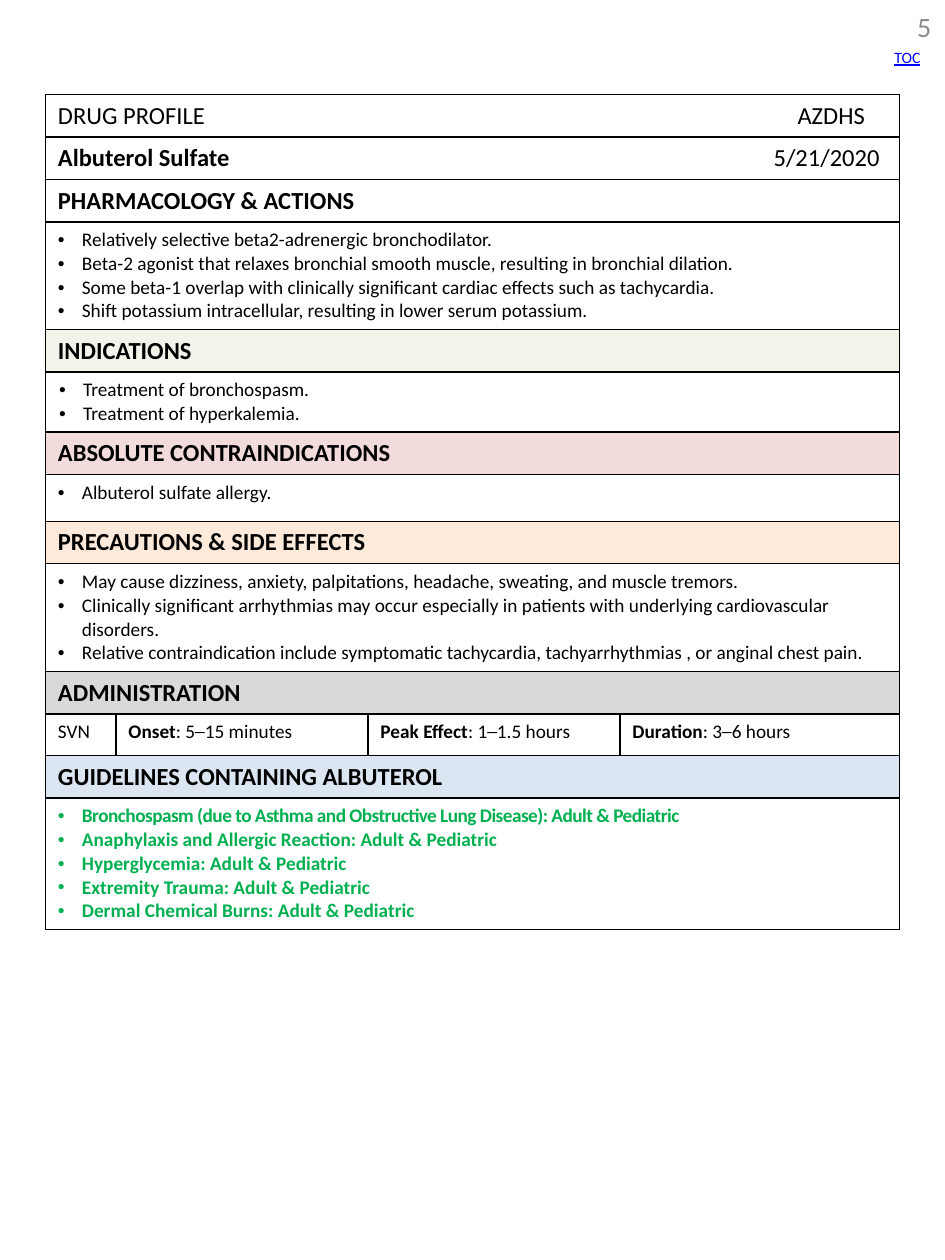
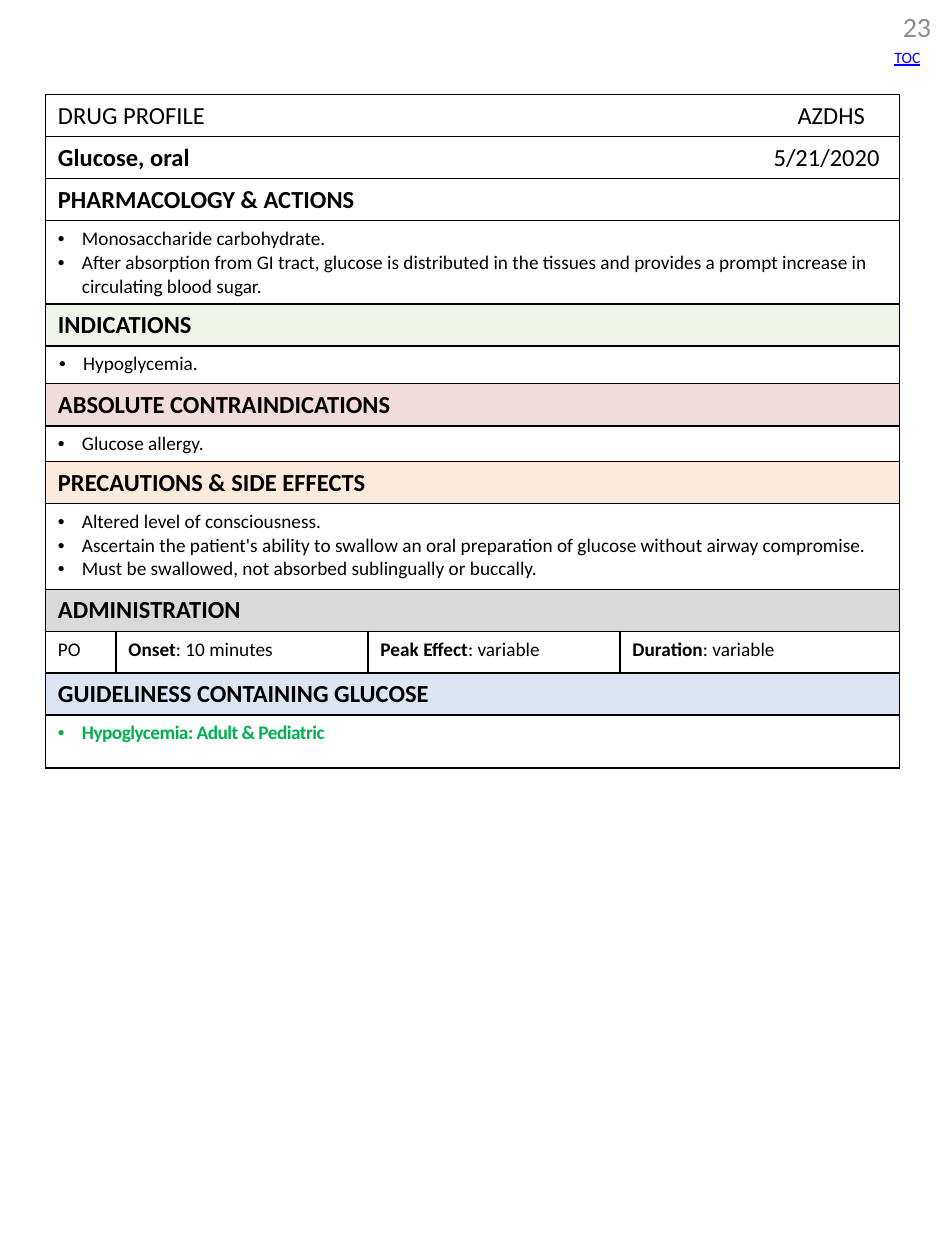
from dataclasses import dataclass, field

from lxml.etree import SubElement
from pptx import Presentation
from pptx.dml.color import RGBColor
from pptx.enum.text import MSO_ANCHOR as Anchor, PP_ALIGN as Align
from pptx.oxml.ns import qn
from pptx.util import Inches, Pt


def text_style(size, color="000000", **extra):
    return {"size": Pt(size), "color": color, "bold": False, **extra}


@dataclass(frozen=True)
class Theme:
    font: str = "Calibri"
    border: str = "000000"
    border_width: int = Pt(1)
    text: dict = field(default_factory=lambda: {
        "plain": text_style(14),
        "heading": text_style(14, bold=True),
        "body": text_style(11),
        "label": text_style(11, bold=True),
        "guideline": text_style(11, "00B050", bold=True),
        "number": text_style(16, "8C8C8C"),
        "contents": text_style(9, "0000FF", underline=True),
    })
    # Each band: fill colour and opacity in percent
    bands: dict = field(default_factory=lambda: {
        "indications": ("EBF1DE", 65),
        "contraindications": ("F2DCDB", 100),
        "precautions": ("FDEADA", 100),
        "administration": ("D9D9D9", 100),
        "guidelines": ("DCE6F2", 100),
    })


COLUMNS = (0.56, 2, 2, 2.22)
HEADING_HEIGHT = 0.33
LEFT, TOP = 0.36, 0.75
ORGANISATION_TAB, DATE_TAB = 5.87, 5.68

# Section key, heading, left indent of its bullets
SECTIONS = (
    ("pharmacology", "PHARMACOLOGY & ACTIONS", 0.19),
    ("indications", "INDICATIONS", 0.2),
    ("contraindications", "ABSOLUTE CONTRAINDICATIONS", 0.19),
    ("precautions", "PRECAUTIONS & SIDE EFFECTS", 0.19),
)
EFFECTS = ("Onset", "Peak Effect", "Duration")

# Each section: row height and bullet lines
PROFILES = (
    {
        "number": "5",
        "drug": "Albuterol Sulfate",
        "date": "5/21/2020",
        "pharmacology": (0.85, (
            "Relatively selective beta2-adrenergic bronchodilator.",
            "Beta-2 agonist that relaxes bronchial smooth muscle, resulting in bronchial dilation.",
            "Some beta-1 overlap with clinically significant cardiac effects such as tachycardia.",
            "Shift potassium intracellular, resulting in lower serum potassium.",
        )),
        "indications": (0.47, (
            "Treatment of bronchospasm.",
            "Treatment of hyperkalemia.",
        )),
        "contraindications": (0.37, ("Albuterol sulfate allergy.",)),
        "precautions": (0.85, (
            "May cause dizziness, anxiety, palpitations, headache, sweating, and muscle tremors.",
            "Clinically significant arrhythmias may occur especially in patients with underlying "
            "cardiovascular disorders.",
            "Relative contraindication include symptomatic tachycardia, tachyarrhythmias , "
            "or anginal chest pain.",
        )),
        "route": "SVN",
        "effects": ("5─15 minutes", "1─1.5 hours", "3─6 hours"),
        "guidelines_heading": "GUIDELINES CONTAINING ALBUTEROL",
        "guidelines": (1.04, (
            "Bronchospasm (due to Asthma and Obstructive Lung Disease): Adult & Pediatric",
            "Anaphylaxis and Allergic Reaction: Adult & Pediatric",
            "Hyperglycemia: Adult & Pediatric",
            "Extremity Trauma: Adult & Pediatric",
            "Dermal Chemical Burns: Adult & Pediatric",
        )),
    },
    {
        "number": "23",
        "drug": "Glucose, oral",
        "date": "5/21/2020",
        "pharmacology": (0.66, (
            "Monosaccharide carbohydrate.",
            "After absorption from GI tract, glucose is distributed in the tissues and provides "
            "a prompt increase in circulating blood sugar.",
        )),
        "indications": (0.3, ("Hypoglycemia.",)),
        "contraindications": (0.28, ("Glucose allergy.",)),
        "precautions": (0.68, (
            "Altered level of consciousness.",
            "Ascertain the patient's ability to swallow an oral preparation of glucose "
            "without airway compromise.",
            "Must be swallowed, not absorbed sublingually or buccally.",
        )),
        "route": "PO",
        "effects": ("10 minutes", "variable", "variable"),
        "guidelines_heading": "GUIDELINESS CONTAINING GLUCOSE",
        "guidelines": (0.42, ("Hypoglycemia: Adult & Pediatric",)),
    },
)


class ProfileDeck:
    def __init__(self, theme):
        self.theme = theme
        self.deck = Presentation()
        self.deck.slide_width, self.deck.slide_height = Inches(7.5), Inches(10)
        self.page = self.table = None
        self.row = 0

    def add_page(self):
        self.page = self.deck.slides.add_slide(self.deck.slide_layouts[6])

    def add_span(self, para, text, style):
        span = para.add_run()
        span.text = text
        span.font.name = self.theme.font
        for name, value in self.theme.text[style].items():
            if name == "color":
                span.font.color.rgb = RGBColor.from_string(value)
            else:
                setattr(span.font, name, value)
        return span

    def add_text(self, left, top, width, height, text, style, align=Align.LEFT, inset=None):
        box = self.page.shapes.add_textbox(*map(Inches, (left, top, width, height)))
        frame = box.text_frame
        frame.word_wrap = True
        if inset is not None:
            for side in ("left", "top", "right", "bottom"):
                setattr(frame, f"margin_{side}", Inches(inset))
        frame.paragraphs[0].alignment = align
        self.add_span(frame.paragraphs[0], text, style)

    def add_table(self, row_count):
        size = (sum(COLUMNS), row_count * HEADING_HEIGHT)
        frame = self.page.shapes.add_table(
            row_count, len(COLUMNS), *map(Inches, (LEFT, TOP, *size)))
        self.table = frame.table
        self.row = 0
        for option in ("first_row", "horz_banding"):
            setattr(self.table, option, False)
        for column, width in zip(self.table.columns, COLUMNS):
            column.width = Inches(width)
        for cell in self.table.iter_cells():
            self.add_borders(cell)
            cell.fill.background()

    def add_borders(self, cell):
        properties = cell._tc.get_or_add_tcPr()
        for side in ("lnL", "lnR", "lnT", "lnB"):
            line = SubElement(properties, qn(f"a:{side}"), w=str(self.theme.border_width))
            fill = SubElement(line, qn("a:solidFill"))
            SubElement(fill, qn("a:srgbClr"), val=self.theme.border)

    def next_row(self, height, merged=True):
        """Size the next table row and return its cells."""
        cells = [self.table.cell(self.row, index) for index in range(len(COLUMNS))]
        self.table.rows[self.row].height = Inches(height)
        if merged:
            cells[0].merge(cells[-1])
        self.row += 1
        return cells

    def add_heading(self, text, style="heading", band=None):
        cell = self.next_row(HEADING_HEIGHT)[0]
        cell.vertical_anchor = Anchor.MIDDLE
        if band in self.theme.bands:
            color, opacity = self.theme.bands[band]
            cell.fill.solid()
            cell.fill.fore_color.rgb = RGBColor.from_string(color)
            if opacity < 100:
                tint = cell._tc.tcPr.find(f"{qn('a:solidFill')}/{qn('a:srgbClr')}")
                SubElement(tint, qn("a:alpha"), val=str(opacity * 1000))
        para = cell.text_frame.paragraphs[0]
        self.add_span(para, text, style)
        return para

    def add_split_heading(self, text, style, side_text, tab):
        """Add a heading with plain text at a tab stop on its right."""
        para = self.add_heading(text, style)
        stops = SubElement(para._p.get_or_add_pPr(), qn("a:tabLst"))
        SubElement(stops, qn("a:tab"), pos=str(Inches(tab)), algn="l")
        self.add_span(para, f"\t{side_text}", "plain")

    def add_bullets(self, height, lines, style="body", indent=0.19):
        """Add a row of bullets and return their spans."""
        frame = self.next_row(height)[0].text_frame
        spans = []
        for index, line in enumerate(lines):
            para = frame.add_paragraph() if index else frame.paragraphs[0]
            properties = para._p.get_or_add_pPr()
            properties.set("marL", str(Inches(indent)))
            properties.set("indent", str(Inches(-0.19)))
            SubElement(properties, qn("a:buFont"), typeface="Arial")
            SubElement(properties, qn("a:buChar"), char="•")
            spans.append(self.add_span(para, line, style))
        return spans

    def add_administration(self, route, effects):
        cells = self.next_row(HEADING_HEIGHT, merged=False)
        paras = [cell.text_frame.paragraphs[0] for cell in cells]
        self.add_span(paras[0], route, "body")
        for para, label, value in zip(paras[1:], EFFECTS, effects):
            self.add_span(para, label, "label")
            self.add_span(para, f": {value}", "body")

    def add_profile(self, profile):
        self.add_page()
        self.add_table(row_count=2 * len(SECTIONS) + 6)
        self.add_split_heading("DRUG PROFILE", "plain", "AZDHS", ORGANISATION_TAB)
        self.add_split_heading(profile["drug"], "heading", profile["date"], DATE_TAB)
        for key, heading, indent in SECTIONS:
            self.add_heading(heading, band=key)
            self.add_bullets(*profile[key], indent=indent)
        self.add_heading("ADMINISTRATION", band="administration")
        self.add_administration(profile["route"], profile["effects"])
        self.add_heading(profile["guidelines_heading"], band="guidelines")
        spans = self.add_bullets(*profile["guidelines"], style="guideline")
        spans[0].font._element.set("spc", "-30")
        self.add_text(6.92, 0.08, 0.47, 0.27, profile["number"], "number", Align.RIGHT, inset=0)
        self.add_text(7, 0.33, 0.42, 0.25, "TOC", "contents")


def main():
    builder = ProfileDeck(Theme())
    for profile in PROFILES:
        builder.add_profile(profile)
    builder.deck.save("out.pptx")


if __name__ == "__main__":
    main()
